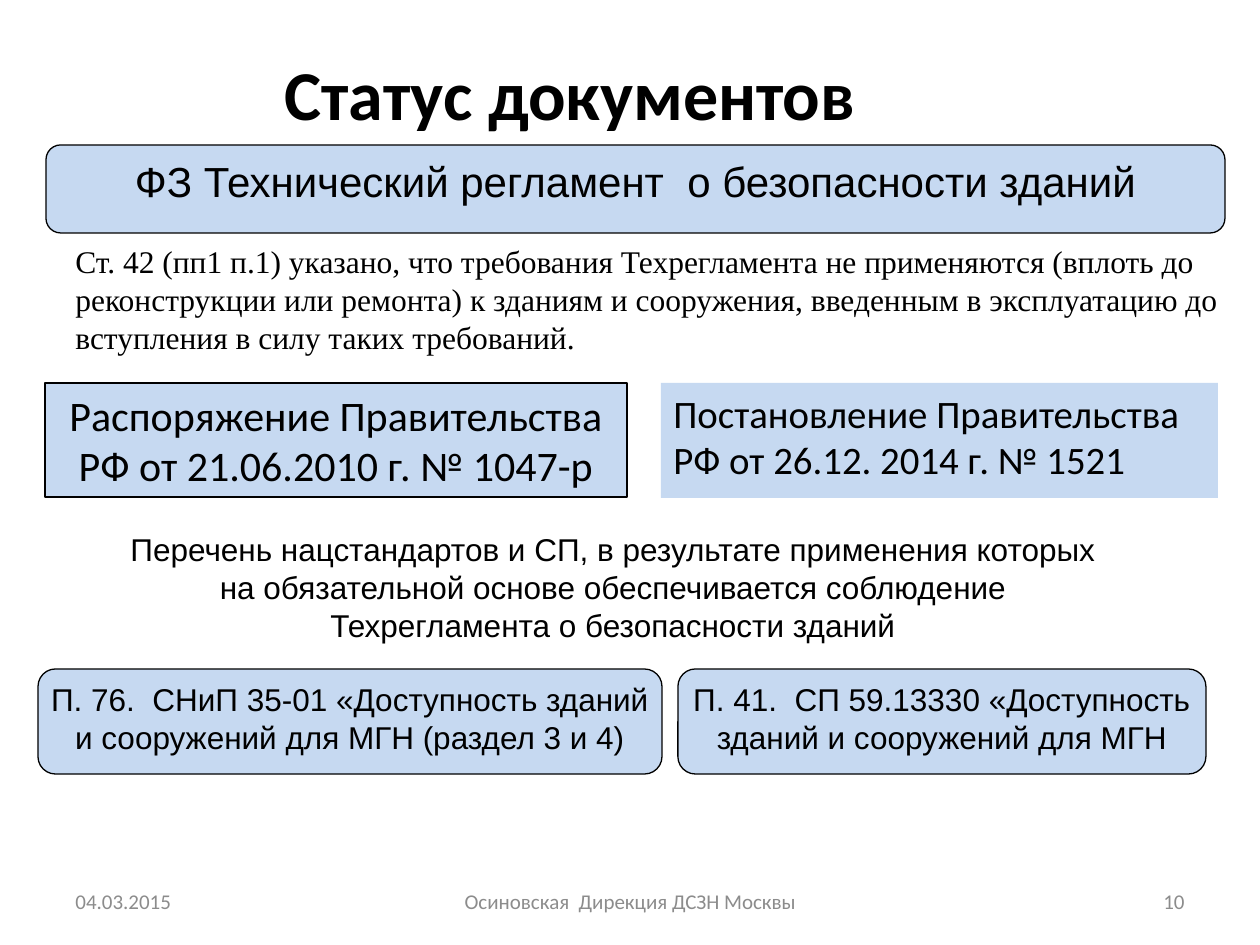
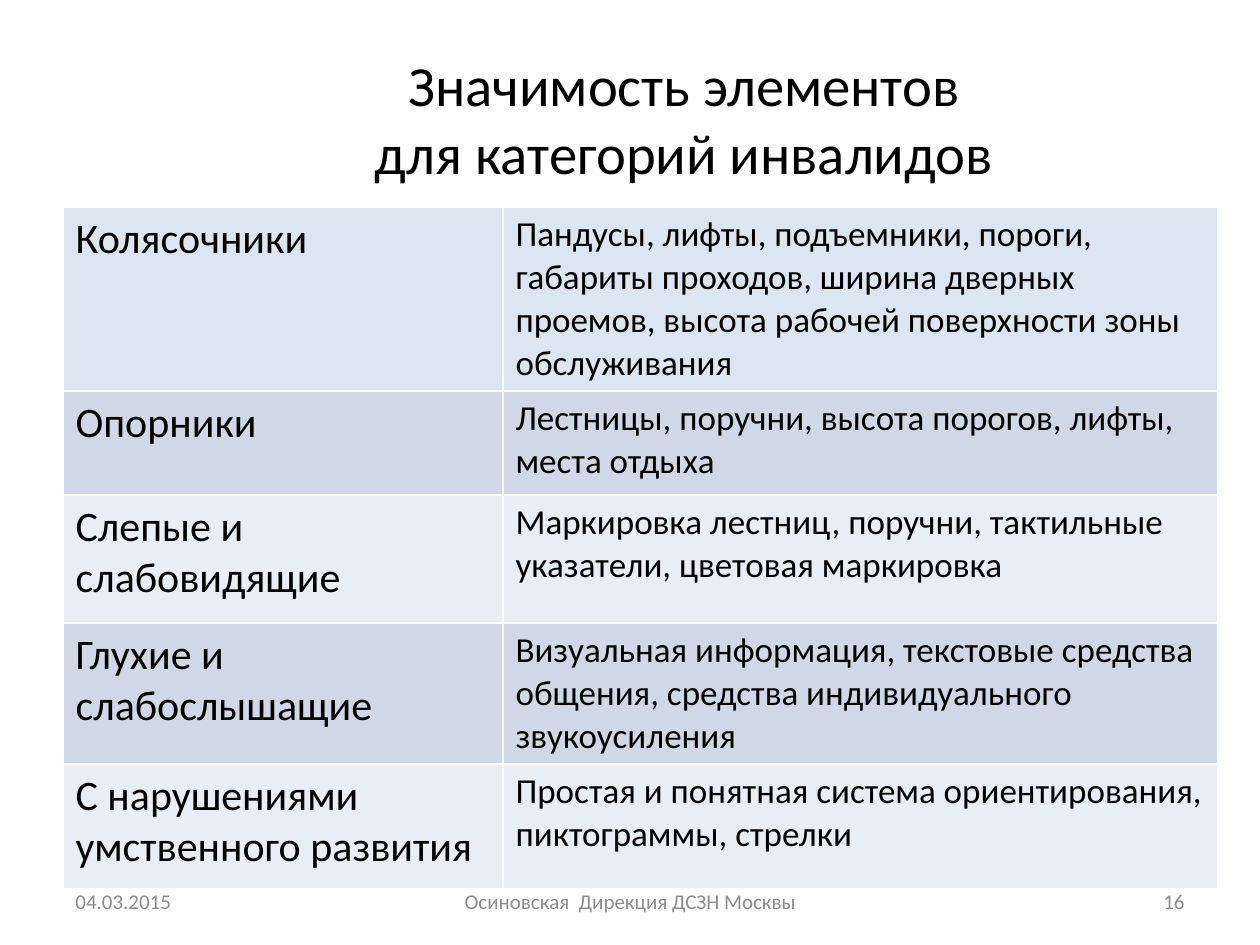
"""Build two slides on accessibility documents and disability categories."""
from lxml.etree import SubElement
from pptx import Presentation
from pptx.dml.color import RGBColor
from pptx.enum.shapes import MSO_SHAPE
from pptx.enum.text import MSO_ANCHOR, PP_ALIGN
from pptx.oxml.ns import qn
from pptx.util import Pt

PX = 914400 // 126
BLACK = RGBColor(0x00, 0x00, 0x00)
GRAY = RGBColor(0x8C, 0x8C, 0x8C)
WHITE = RGBColor(0xFF, 0xFF, 0xFF)
PANEL = RGBColor(0xC6, 0xD9, 0xF1)
FIRST_ROW = RGBColor(0xDC, 0xE6, 0xF2)
BAND_DARK = RGBColor(0xD0, 0xD8, 0xE8)
BAND_LIGHT = RGBColor(0xE9, 0xED, 0xF4)
LEFT, CENTER, RIGHT = PP_ALIGN.LEFT, PP_ALIGN.CENTER, PP_ALIGN.RIGHT

CATEGORIES = [
    ("Колясочники",
     "Пандусы, лифты, подъемники, пороги, габариты проходов, ширина дверных "
     "проемов, высота рабочей поверхности зоны обслуживания", 184),
    ("Опорники", "Лестницы, поручни, высота порогов, лифты, места отдыха", 104),
    ("Слепые и слабовидящие",
     "Маркировка лестниц, поручни, тактильные указатели, цветовая маркировка", 128),
    ("Глухие и слабослышащие",
     "Визуальная информация, текстовые средства общения, средства "
     "индивидуального звукоусиления", 141),
    ("С нарушениями умственного развития",
     "Простая и понятная система ориентирования, пиктограммы, стрелки", 125),
]


def emu(*lengths):
    """Turn px lengths into EMU."""
    return [n * PX for n in lengths]


def write(tf, text, size, font="Calibri", color=BLACK, align=LEFT, bold=False):
    """Put text in a frame and format every run."""
    tf.text = text
    for p in tf.paragraphs:
        p.alignment = align
        for r in p.runs:
            r.font.size, r.font.name, r.font.bold = Pt(size), font, bold
            r.font.color.rgb = color


def add_text(s, box, text, size, anchor=MSO_ANCHOR.TOP, **style):
    """Add a wrapping text box."""
    tf = s.shapes.add_textbox(*emu(*box)).text_frame
    tf.word_wrap = True
    tf.vertical_anchor = anchor
    write(tf, text, size, **style)


def add_title(s, box, text, size, bold=False):
    """Add a centred slide title."""
    add_text(s, box, text, size, MSO_ANCHOR.MIDDLE, align=CENTER, bold=bold)


def add_footer(s, number):
    """Add the date, author and slide number."""
    for left, width, text, align in (
            (63, 294, "04.03.2015", LEFT),
            (431, 399, "Осиновская  Дирекция ДСЗН Москвы", CENTER),
            (903, 294, str(number), RIGHT)):
        add_text(s, (left, 876, width, 50), text, 12, MSO_ANCHOR.MIDDLE,
                 color=GRAY, align=align)


def add_panel(s, kind, box, text, size, font="Arial", align=CENTER,
              outlined=True, wrap=False):
    """Add a pale blue panel with text at its top."""
    sp = s.shapes.add_shape(kind, *emu(*box))
    sp.shadow.inherit = False
    sp.fill.solid()
    sp.fill.fore_color.rgb = PANEL
    if outlined:
        sp.line.color.rgb = BLACK
        sp.line.width = Pt(0.75)
    else:
        sp.line.fill.background()
    tf = sp.text_frame
    tf.word_wrap = wrap
    tf.vertical_anchor = MSO_ANCHOR.TOP
    write(tf, text, size, font, align=align)


def style_cell(cell, fill):
    """Give a cell white borders and a solid fill."""
    tc_pr = cell._tc.get_or_add_tcPr()
    for side in ("lnL", "lnR", "lnT", "lnB"):
        ln = SubElement(tc_pr, qn(f"a:{side}"), w=str(Pt(1)))
        SubElement(SubElement(ln, qn("a:solidFill")), qn("a:srgbClr"), val=str(WHITE))
    cell.fill.solid()
    cell.fill.fore_color.rgb = fill


def add_category_table(s, left, top, widths):
    """Add the table of categories and the elements they need."""
    height = sum(row[-1] for row in CATEGORIES)
    table = s.shapes.add_table(len(CATEGORIES), len(widths),
                               *emu(left, top, sum(widths), height)).table
    table.first_row = False
    for column, width in zip(table.columns, emu(*widths)):
        column.width = width
    for i, (category, elements, row_height) in enumerate(CATEGORIES):
        table.rows[i].height = row_height * PX
        fill = FIRST_ROW if i == 0 else (BAND_LIGHT, BAND_DARK)[i % 2]
        for j, (text, size) in enumerate(((category, 24), (elements, 20))):
            cell = table.cell(i, j)
            style_cell(cell, fill)
            write(cell.text_frame, text, size)


def build_status(s):
    """Fill the slide on the status of documents."""
    rounded, rect = MSO_SHAPE.ROUNDED_RECTANGLE, MSO_SHAPE.RECTANGLE
    add_title(s, (243, 14, 654, 158), "Статус документов", 40, bold=True)
    add_panel(s, rounded, (46, 145, 1179, 88),
              "ФЗ Технический регламент  о безопасности зданий", 24)
    add_text(s, (63, 236, 1197, 127),
             "Ст. 42 (пп1 п.1) указано, что требования Техрегламента не применяются "
             "(вплоть до реконструкции или ремонта) к зданиям и сооружения, введенным "
             "в эксплуатацию до вступления в силу таких требований.",
             18, font="Times New Roman")
    add_panel(s, rect, (45, 383, 582, 114),
              "Распоряжение Правительства\nРФ от 21.06.2010 г. № 1047-р", 24, "Calibri")
    add_panel(s, rect, (661, 383, 557, 115),
              "Постановление Правительства РФ от 26.12. 2014 г. № 1521", 22.2,
              "Calibri", LEFT, outlined=False, wrap=True)
    add_text(s, (59, 524, 1108, 127),
             "Перечень нацстандартов и СП, в результате применения которых\n"
             "на обязательной основе обеспечивается соблюдение\n"
             "Техрегламента о безопасности зданий", 18, font="Arial", align=CENTER)
    add_panel(s, rounded, (38, 669, 624, 105),
              "П. 76.  СНиП 35-01 «Доступность зданий\n"
              "и сооружений для МГН (раздел 3 и 4)", 18)
    add_panel(s, rounded, (678, 669, 528, 105),
              "П. 41.  СП 59.13330 «Доступность\nзданий и сооружений для МГН", 18)
    add_footer(s, 10)


def build_categories(s):
    """Fill the slide on elements for each category."""
    add_title(s, (339, 39, 690, 158),
              "Значимость элементов\vдля категорий инвалидов", 32.4)
    add_category_table(s, 63, 207, (440, 715))
    add_footer(s, 16)


def main():
    """Build and save the presentation."""
    prs = Presentation()
    prs.slide_width, prs.slide_height = emu(1260, 945)
    for build in (build_status, build_categories):
        build(prs.slides.add_slide(prs.slide_layouts[6]))
    prs.save("out.pptx")


if __name__ == "__main__":
    main()
